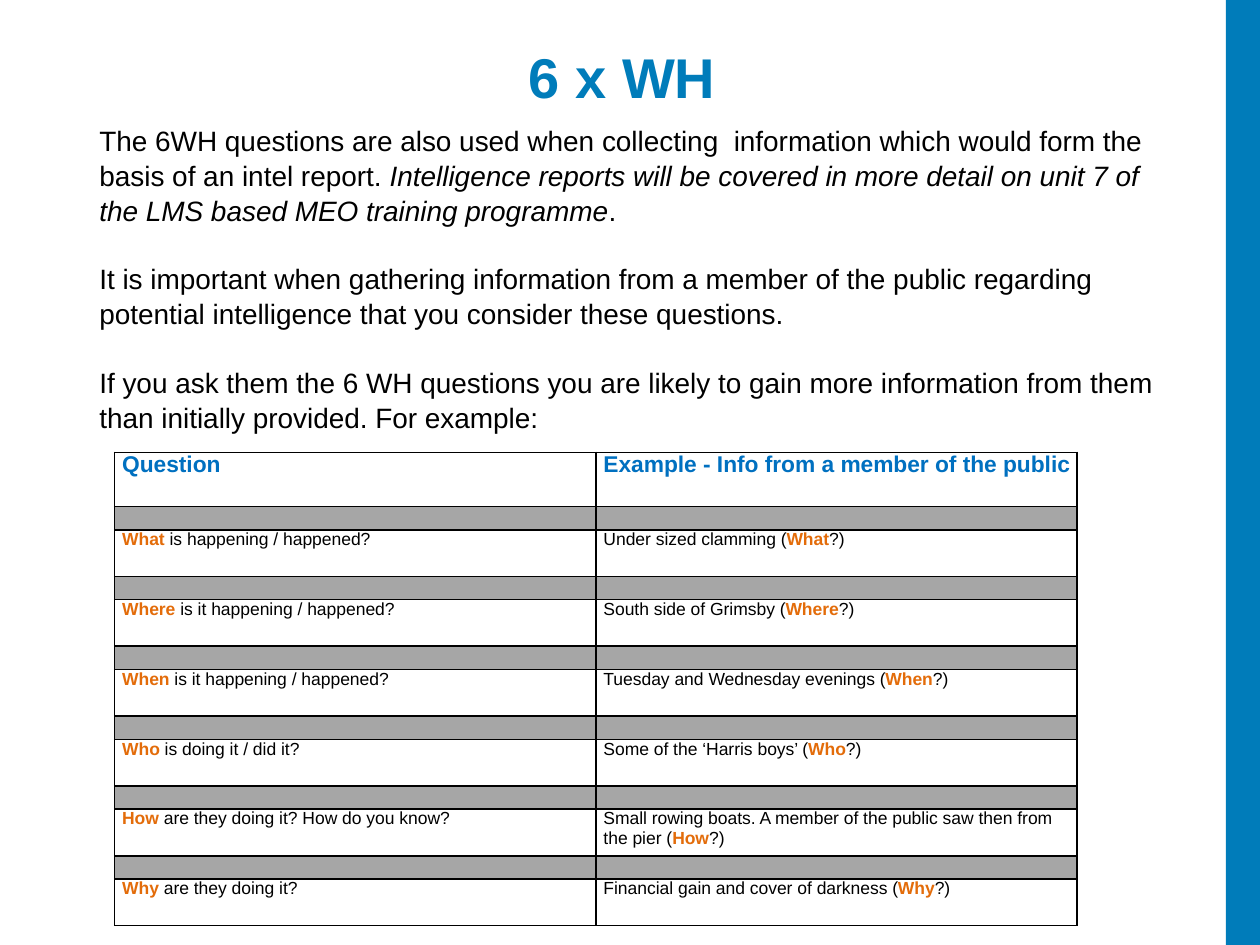
from lxml.etree import SubElement
from pptx import Presentation
from pptx.dml.color import RGBColor
from pptx.enum.shapes import MSO_SHAPE
from pptx.enum.text import MSO_ANCHOR, PP_ALIGN
from pptx.oxml.ns import qn
from pptx.util import Inches, Pt

HUES = {"blue": "007CBA", "head": "0070C0", "key": "E36C0A",
        "grey": "A6A6A6", "white": "FFFFFF", "black": "000000"}


def style(font, size, hue, bold=False):
    font.name, font.size, font.bold = "Arial", Pt(size), bold
    font.color.rgb = RGBColor.from_string(HUES[hue])


def edge(cell):
    """Fill in the four borders of a cell, ahead of its fill."""
    props = cell._tc.get_or_add_tcPr()
    for side in ("lnL", "lnR", "lnT", "lnB"):
        line = SubElement(props, qn(f"a:{side}"), w=str(Pt(1)))
        paint = SubElement(line, qn("a:solidFill"))
        SubElement(paint, qn("a:srgbClr"), val=HUES["black"])


deck = Presentation()
deck.slide_width, deck.slide_height = Inches(10), Inches(7.5)
slide = deck.slides.add_slide(deck.slide_layouts[6])

# Side band
band = slide.shapes.add_shape(MSO_SHAPE.RECTANGLE, Inches(9.73), 0,
                              Inches(0.27), Inches(7.5))
band.shadow.inherit = False
band.fill.solid()
band.fill.fore_color.rgb = RGBColor.from_string(HUES["blue"])
band.line.fill.background()

# Title
title = slide.shapes.add_textbox(Inches(0.69), Inches(0.24),
                                 Inches(8.62), Inches(0.72)).text_frame
title.word_wrap = True
title.vertical_anchor = MSO_ANCHOR.MIDDLE
par = title.paragraphs[0]
par.text = "6 x WH "
par.alignment = PP_ALIGN.CENTER
style(par.font, 32, "blue", True)

# Introduction: each paragraph is a list of (text, italic)
intro = [
    [("The 6WH questions are also used when collecting  information which "
      "would form the basis of an intel report. ", False),
     ("Intelligence reports will be covered in more detail on unit 7 of the "
      "LMS based MEO training programme", True),
     (".", False)],
    [("It is important when gathering information from a member of the public "
      "regarding potential intelligence that you consider these questions.",
      False)],
    [("If you ask them the 6 WH questions you are likely to gain more "
      "information from them than initially provided. For example:", False)],
]
body = slide.shapes.add_textbox(Inches(0.69), Inches(0.92),
                                Inches(8.62), Inches(2.56)).text_frame
body.word_wrap = True
for i, parts in enumerate(intro):
    par = body.add_paragraph() if i else body.paragraphs[0]
    par.line_spacing = 1.04
    if i:
        par.space_before = Pt(19.2)
    style(par.font, 16, "black")
    for text, slant in parts:
        run = par.add_run()
        run.text = text
        run.font.italic = slant

# Question table: a grey row comes before each question
asks = [
    ("What", " is happening / happened?", "Under sized clamming"),
    ("Where", " is it happening / happened?", "South side of Grimsby"),
    ("When", " is it happening / happened?", "Tuesday and Wednesday evenings"),
    ("Who", " is doing it / did it?", "Some of the ‘Harris boys’"),
    ("How", " are they doing it? How do you know?",
     "Small rowing boats. A member of the public saw then from the pier"),
    ("Why", " are they doing it?", "Financial gain and cover of darkness"),
]
heads = ["Question", "Example - Info from a member of the public"]
rows = [[[(text, "head")] for text in heads]]
for word, rest, case in asks:
    rows.append([[], []])
    rows.append([[(word, "key"), (rest, "black")],
                 [(case + " (", "black"), (word, "key"), ("?)", "black")]])

table = slide.shapes.add_table(len(rows), 2, Inches(0.91), Inches(3.59),
                               Inches(7.64), Inches(3.75)).table
table.first_row = table.horz_banding = False
for r, row in enumerate(rows):
    tall = 0.43 if r == 0 else 0.37 / (1 + r % 2)
    table.rows[r].height = Inches(tall)
    for c, parts in enumerate(row):
        cell = table.cell(r, c)
        cell.margin_left, cell.margin_right = Inches(0.06), Inches(0.04)
        cell.margin_top = cell.margin_bottom = 0
        edge(cell)
        cell.fill.solid()
        shade = "white" if parts else "grey"
        cell.fill.fore_color.rgb = RGBColor.from_string(HUES[shade])
        par = cell.text_frame.paragraphs[0]
        for text, hue in parts:
            run = par.add_run()
            run.text = text
            style(run.font, 10 if r else 13, hue, hue != "black")
        if not parts:
            SubElement(par._p, qn("a:endParaRPr"), sz="1000")

deck.save("out.pptx")
